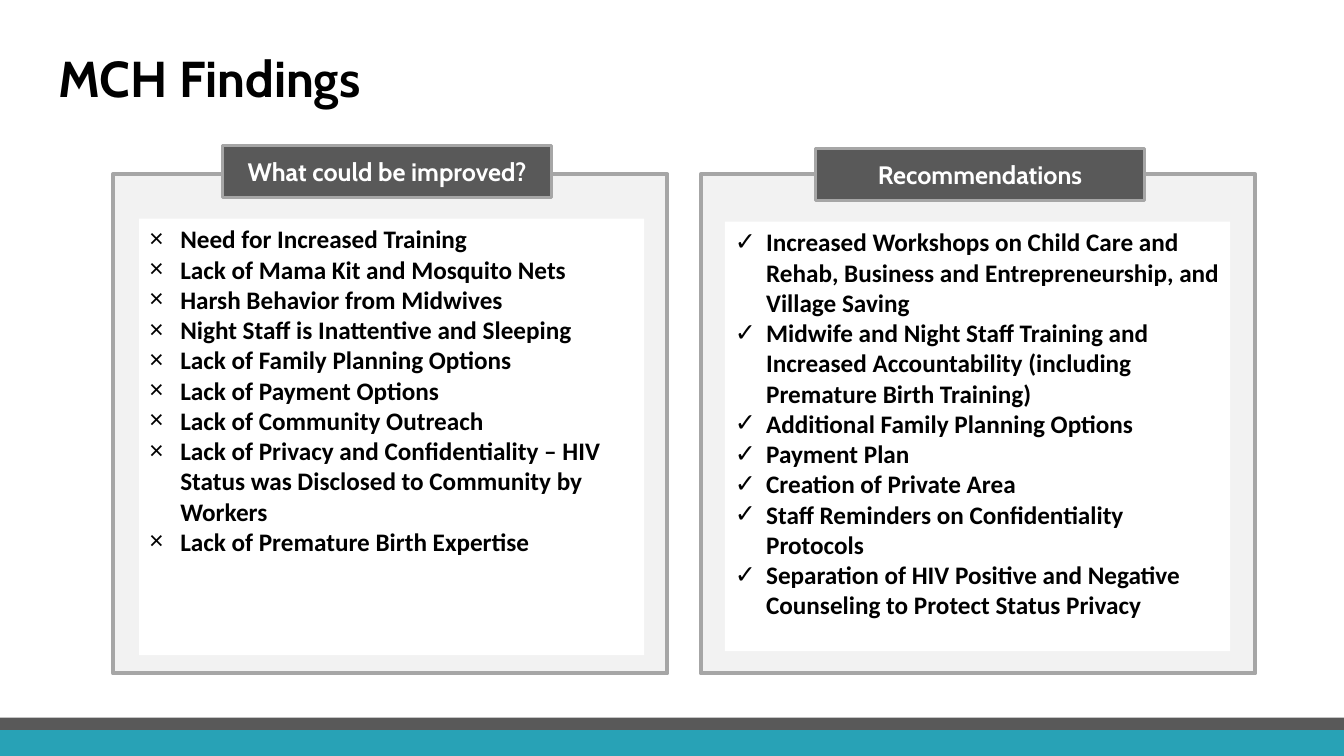
"""Build the MCH Findings slide with its two bulleted panels."""
from dataclasses import dataclass
from typing import Optional

from lxml.etree import SubElement
from pptx import Presentation
from pptx.dml.color import RGBColor
from pptx.enum.shapes import MSO_SHAPE
from pptx.enum.text import MSO_ANCHOR, PP_ALIGN
from pptx.oxml.ns import qn
from pptx.util import Inches, Pt

COLORS = {
    "teal": "28A2B6",
    "dark": "595959",
    "border": "A6A6A6",
    "panel": "F2F2F2",
    "white": "FFFFFF",
    "black": "000000",
}
TITLE_FONT = {"name": "Cabin", "size": Pt(36), "bold": True}
HEADING_FONT = {"name": "Cabin", "size": Pt(18), "bold": True}
LIST_FONT = {"name": "Calibri", "size": Pt(18), "bold": True}
BULLET_INDENT = Inches(0.31)


@dataclass(frozen=True)
class Box:
    left: float
    top: float
    width: float
    height: float

    def lengths(self) -> list:
        return [Inches(value) for value in (self.left, self.top, self.width, self.height)]


@dataclass(frozen=True)
class Panel:
    frame: Box
    card: Box
    tab: Box
    heading: str
    bullet: str
    items: tuple[str, ...]


BANDS = (
    (Box(0, 7.19, 13.33, 0.31), "teal"),
    (Box(0, 7.12, 13.33, 0.12), "dark"),
)
PANELS = (
    Panel(
        Box(1.12, 1.73, 5.5, 4.95),
        Box(1.38, 2.17, 5.01, 4.33),
        Box(2.21, 1.44, 3.26, 0.52),
        "What could be improved?",
        "×",
        (
            "Need for Increased Training",
            "Lack of Mama Kit and Mosquito Nets",
            "Harsh Behavior from Midwives",
            "Night Staff is Inattentive and Sleeping",
            "Lack of Family Planning Options",
            "Lack of Payment Options",
            "Lack of Community Outreach",
            "Lack of Privacy and Confidentiality – HIV Status was Disclosed to Community by Workers",
            "Lack of Premature Birth Expertise",
        ),
    ),
    Panel(
        Box(6.95, 1.73, 5.5, 4.95),
        Box(7.19, 2.2, 5.01, 4.26),
        Box(8.09, 1.47, 3.26, 0.52),
        "Recommendations",
        "✓",
        (
            "Increased Workshops on Child Care and Rehab, Business and Entrepreneurship, and Village Saving",
            "Midwife and Night Staff Training and Increased Accountability (including Premature Birth Training)",
            "Additional Family Planning Options",
            "Payment Plan",
            "Creation of Private Area",
            "Staff Reminders on Confidentiality Protocols",
            "Separation of HIV Positive and Negative Counseling to Protect Status Privacy",
        ),
    ),
)


def add_rectangle(slide, box: Box, fill: str, line_width: Optional[float] = None):
    shape = slide.shapes.add_shape(MSO_SHAPE.RECTANGLE, *box.lengths())
    shape.shadow.inherit = False
    shape.fill.solid()
    shape.fill.fore_color.rgb = RGBColor.from_string(COLORS[fill])
    if line_width is None:
        shape.line.fill.background()
    else:
        shape.line.color.rgb = RGBColor.from_string(COLORS["border"])
        shape.line.width = Pt(line_width)
    return shape


def write_text(shape, lines: tuple[str, ...], font: dict, color: str, anchor, alignment) -> None:
    frame = shape.text_frame
    frame.word_wrap = True
    frame.vertical_anchor = anchor
    frame.text = "\n".join(lines)
    for paragraph in frame.paragraphs:
        paragraph.alignment = alignment
        run_font = paragraph.runs[0].font
        for attribute, value in font.items():
            setattr(run_font, attribute, value)
        run_font.color.rgb = RGBColor.from_string(COLORS[color])


def add_bullets(shape, bullet: str) -> None:
    for paragraph in shape.text_frame.paragraphs:
        properties = paragraph._p.get_or_add_pPr()
        properties.set("marL", str(BULLET_INDENT))
        properties.set("indent", str(-BULLET_INDENT))
        SubElement(properties, qn("a:buFont"), typeface="Arial")
        SubElement(properties, qn("a:buChar"), char=bullet)


def add_title(slide) -> None:
    title = slide.shapes.add_textbox(*Box(0.48, 0.08, 11.5, 1.45).lengths())
    write_text(title, ("MCH Findings",), TITLE_FONT, "black", MSO_ANCHOR.MIDDLE, PP_ALIGN.LEFT)
    title.text_frame.paragraphs[0].line_spacing = 0.9


def add_panel(slide, panel: Panel) -> None:
    add_rectangle(slide, panel.frame, "panel", 3)
    card = add_rectangle(slide, panel.card, "white")
    write_text(card, panel.items, LIST_FONT, "black", MSO_ANCHOR.TOP, PP_ALIGN.LEFT)
    add_bullets(card, panel.bullet)
    tab = add_rectangle(slide, panel.tab, "dark", 2.25)
    write_text(tab, (panel.heading,), HEADING_FONT, "white", MSO_ANCHOR.MIDDLE, PP_ALIGN.CENTER)


def main() -> None:
    presentation = Presentation()
    presentation.slide_width = Inches(13.33)
    presentation.slide_height = Inches(7.5)
    slide = presentation.slides.add_slide(presentation.slide_layouts[6])
    for box, fill in BANDS:
        add_rectangle(slide, box, fill)
    add_title(slide)
    for panel in PANELS:
        add_panel(slide, panel)
    presentation.save("out.pptx")


if __name__ == "__main__":
    main()
